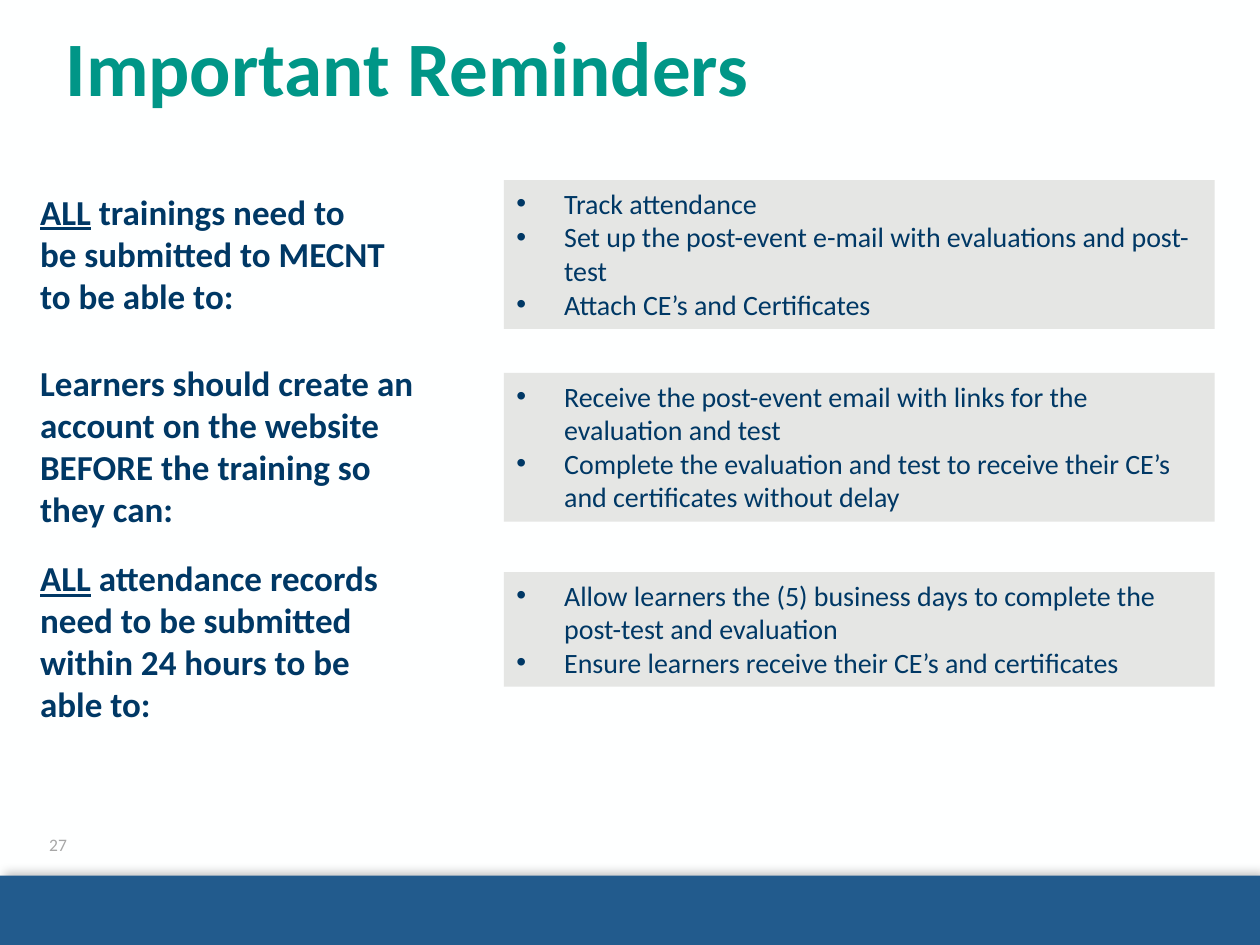
from pptx import Presentation
from pptx.dml.color import RGBColor
from pptx.enum.shapes import MSO_SHAPE
from pptx.enum.text import MSO_ANCHOR, MSO_AUTO_SIZE, PP_ALIGN
from pptx.oxml import parse_xml
from pptx.oxml.ns import nsdecls
from pptx.util import Inches, Pt

NAVY, TEAL, BLUE, GRAY, PALE = "003865", "009687", "225B8D", "A7A7A7", "E5E6E4"
LEFT, RIGHT, WIDE = 0.22, 4, 5.64

ROWS = [
    {
        "lead": [("ALL", True), (" trainings need to be submitted to MECNT to be able to:", False)],
        "text": (1.46, 2.94, 1.11),
        "card": (1.43, 1.18),
        "items": [
            "Track attendance",
            "Set up the post-event e-mail with evaluations and post-test",
            "Attach CE’s and Certificates",
        ],
    },
    {
        "lead": [("Learners should create an account on the website BEFORE the training so they can:", False)],
        "text": (2.82, 3.25, 1.45),
        "card": (2.96, 1.18),
        "items": [
            "Receive the post-event email with links for the evaluation and test",
            "Complete the evaluation and test to receive their CE’s and certificates without delay",
        ],
    },
    {
        "lead": [("ALL", True), (" attendance records need to be submitted within 24 hours to be able to:", False)],
        "text": (4.37, 3.04, 1.45),
        "card": (4.54, 0.91),
        "items": [
            "Allow learners the (5) business days to complete the post-test and evaluation",
            "Ensure learners receive their CE’s and certificates",
        ],
    },
]


def rgb(code):
    return RGBColor.from_string(code)


def box(*spot):
    return [Inches(n) for n in spot]


def write(shape, paras, size=20, color=NAVY, bold=False, align=PP_ALIGN.LEFT,
          anchor=MSO_ANCHOR.TOP, pad=0.1, space=None, bullet=False, grow=False):
    frame = shape.text_frame
    frame.word_wrap = True
    frame.auto_size = MSO_AUTO_SIZE.SHAPE_TO_FIT_TEXT if grow else MSO_AUTO_SIZE.NONE
    frame.vertical_anchor = anchor
    frame.margin_left = frame.margin_right = Inches(pad)
    frame.margin_top = frame.margin_bottom = Inches(0.05)
    for i, runs in enumerate(paras):
        para = frame.add_paragraph() if i else frame.paragraphs[0]
        para.alignment = align
        if space:
            para.line_spacing = space
        if bullet:
            props = para._p.get_or_add_pPr()
            props.set("marL", str(Inches(0.38)))
            props.set("indent", str(Inches(-0.38)))
            for mark in (f'<a:buClr {nsdecls("a")}><a:srgbClr val="{color}"/></a:buClr>',
                         f'<a:buFont {nsdecls("a")} typeface="Arial"/>',
                         f'<a:buChar {nsdecls("a")} char="•"/>'):
                props.append(parse_xml(mark))
        for text, line in runs:
            run = para.add_run()
            run.text = text
            font = run.font
            font.name, font.size, font.bold = "Calibri", Pt(size), bold
            font.underline = line
            font.color.rgb = rgb(color)


def panel(slide, spot, color):
    shape = slide.shapes.add_shape(MSO_SHAPE.RECTANGLE, *box(*spot))
    shape.shadow.inherit = False
    shape.fill.solid()
    shape.fill.fore_color.rgb = rgb(color)
    shape.line.fill.background()
    return shape


def shade(shape):
    shape._element.spPr.find("{*}effectLst").append(parse_xml(
        f'<a:outerShdw {nsdecls("a")} blurRad="{Pt(6)}" dist="{Pt(3)}" '
        f'dir="{315 * 60000}" algn="ctr" rotWithShape="0">'
        '<a:srgbClr val="000000"><a:alpha val="24000"/></a:srgbClr></a:outerShdw>'))


def main():
    deck = Presentation()
    deck.slide_width, deck.slide_height = box(10, 7.5)
    slide = deck.slides.add_slide(deck.slide_layouts[5])
    slide.background.fill.solid()
    slide.background.fill.fore_color.rgb = rgb("FEFFFF")

    shade(panel(slide, (0, 6.95, 10, 0.55), BLUE))
    number = slide.shapes.add_textbox(*box(0.25, 6.5, 0.42, 0.4))
    write(number, [[("27", False)]], size=10, color=GRAY, pad=0,
          align=PP_ALIGN.CENTER, anchor=MSO_ANCHOR.MIDDLE)

    title = slide.shapes.title
    title.left, title.top, title.width, title.height = box(0.42, 0.19, 9.16, 1.24)
    write(title, [[("Important Reminders", False)]], size=44, color=TEAL, bold=True, space=0.9)

    for row in ROWS:
        top, width, height = row["text"]
        lead = slide.shapes.add_textbox(*box(LEFT, top, width, height))
        write(lead, [row["lead"]], bold=True, grow=True)
        top, height = row["card"]
        card = panel(slide, (RIGHT, top, WIDE, height), PALE)
        write(card, [[(item, False)] for item in row["items"]], size=16, bullet=True, grow=True)

    deck.save("out.pptx")


if __name__ == "__main__":
    main()
